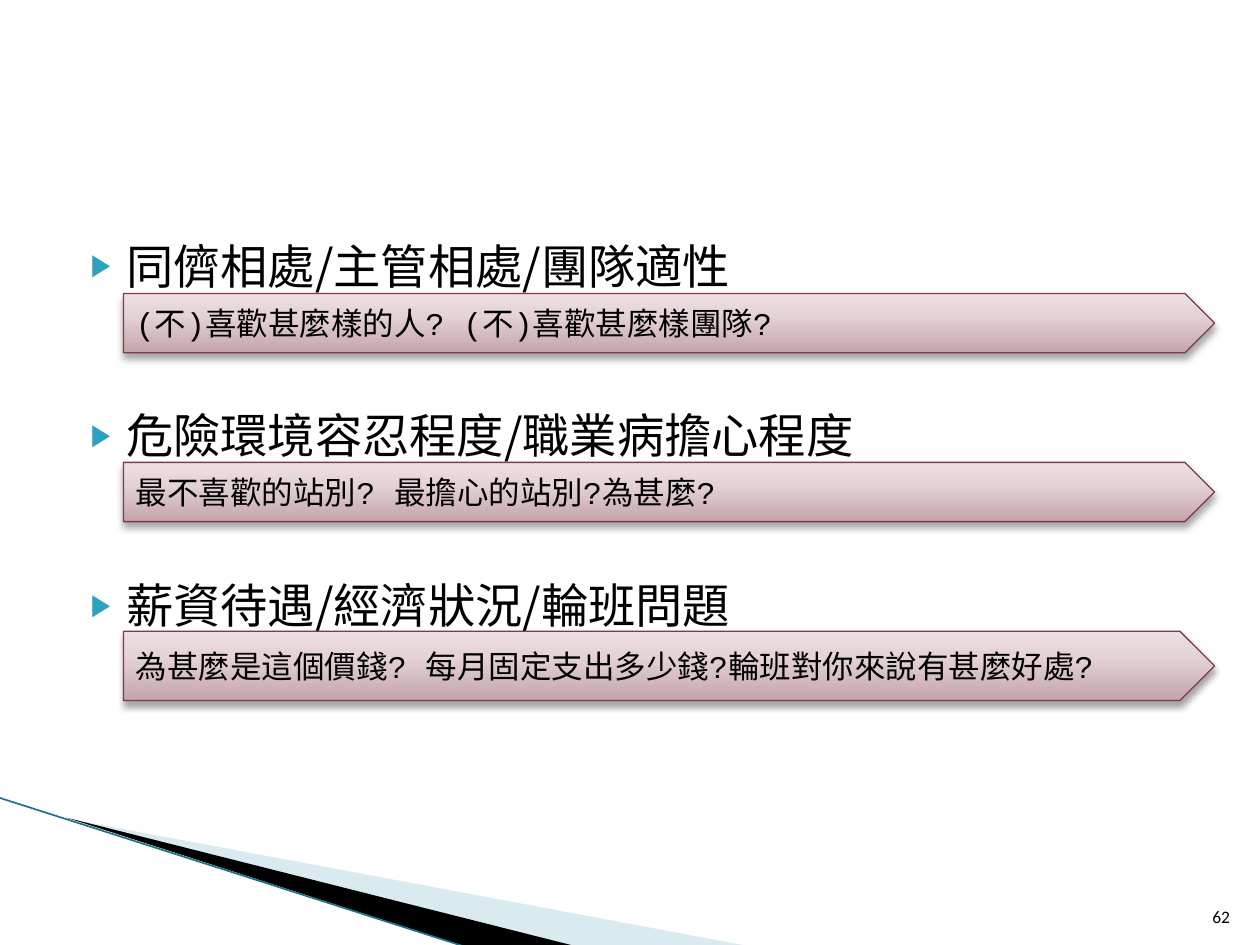
"""Build the interview topics slide with three question bars."""
from pptx import Presentation
from pptx.dml.color import RGBColor
from pptx.enum.shapes import MSO_CONNECTOR, MSO_SHAPE
from pptx.enum.text import MSO_ANCHOR, PP_ALIGN
from pptx.oxml import parse_xml
from pptx.oxml.ns import qn
from pptx.util import Inches, Pt

PLATE = MSO_SHAPE.PENTAGON
STRAIGHT = MSO_CONNECTOR.STRAIGHT
MIDDLE, BOTTOM = MSO_ANCHOR.MIDDLE, MSO_ANCHOR.BOTTOM
LEFT, RIGHT = PP_ALIGN.LEFT, PP_ALIGN.RIGHT
NS = 'xmlns:a="http://schemas.openxmlformats.org/drawingml/2006/main"'
COLORS = {
    "text": "000000", "bullet": "2DA2BF", "pale": "D9EAF1", "black": "000000",
    "edge": "1B7587", "bar_line": "7D3C4A",
    "bar_low": "C4A5A9", "bar_mid": "E5D4D7", "bar_high": "EEE0E2",
}
TOPICS = [
    ("同儕相處/主管相處/團隊適性", "(不)喜歡甚麼樣的人? (不)喜歡甚麼樣團隊?", 0.47),
    ("危險環境容忍程度/職業病擔心程度", "最不喜歡的站別? 最擔心的站別?為甚麼?", 0.47),
    ("薪資待遇/經濟狀況/輪班問題", "為甚麼是這個價錢? 每月固定支出多少錢?輪班對你來說有甚麼好處?", 0.55),
]
WEDGES = [
    ("pale", [(0.55, 6.5), (5.95, 7.51), (4.56, 7.51)]),
    ("black", [(0.53, 6.49), (4.57, 7.51), (3.72, 7.52)]),
]


def rgb(name):
    return RGBColor.from_string(COLORS[name])


def add_text(p, text, font, size):
    r = p.add_run()
    r.text = text
    r.font.name, r.font.size = font, Pt(size)
    r.font.color.rgb = rgb("text")
    return r


prs = Presentation()
prs.slide_width, prs.slide_height = Inches(10), Inches(7.5)
s = prs.slides.add_slide(prs.slide_layouts[1])
title = s.shapes.title.element
title.getparent().remove(title)

for color, points in WEDGES:
    corners = [(Inches(x), Inches(y)) for x, y in points]
    builder = s.shapes.build_freeform(*corners[0])
    builder.add_line_segments(corners[1:], close=True)
    wedge = builder.convert_to_shape()
    wedge.shadow.inherit = False
    wedge.fill.solid()
    wedge.fill.fore_color.rgb = rgb(color)
    wedge.line.fill.background()

edge = s.shapes.add_connector(STRAIGHT, Inches(-0.01), Inches(6.33), Inches(3.71), Inches(7.52))
edge.line.color.rgb = rgb("edge")
edge.line.width = Pt(0.95)
edge.element.spPr.append(parse_xml(f"<a:effectLst {NS}/>"))

body = s.placeholders[1]
body.left, body.top, body.width, body.height = Inches(0.5), Inches(1.62), Inches(9), Inches(4.95)
tf = body.text_frame
for i, (topic, question, height) in enumerate(TOPICS):
    p = tf.paragraphs[0] if i == 0 else tf.add_paragraph()
    p.line_spacing = Pt(47.5)
    p.space_before = Pt(49.5 if i else 0)
    pPr = p._p.get_or_add_pPr()
    pPr.set("marL", str(Inches(0.4)))
    pPr.set("indent", str(Inches(-0.28)))
    for xml in (
        f'<a:buClr {NS}><a:srgbClr val="{COLORS["bullet"]}"/></a:buClr>',
        f'<a:buSzPct {NS} val="65000"/>',
        f'<a:buChar {NS} char="▶"/>',
    ):
        pPr.append(parse_xml(xml))
    r = add_text(p, topic, "Noto Sans CJK SC", 27)
    r._r.get_or_add_rPr().append(parse_xml(f'<a:ea {NS} typeface="Noto Sans CJK SC"/>'))

    bar = s.shapes.add_shape(PLATE, Inches(0.98), Inches(2.33 + 1.34 * i), Inches(8.66), Inches(height))
    bar.line.color.rgb = rgb("bar_line")
    bar.line.width = Pt(0.75)
    spPr = bar.element.spPr
    stops = "".join(
        f'<a:gs pos="{pos * 1000}"><a:srgbClr val="{COLORS[name]}"/></a:gs>'
        for pos, name in ((0, "bar_low"), (65, "bar_mid"), (100, "bar_high"))
    )
    spPr.find(qn("a:prstGeom")).addnext(parse_xml(
        f'<a:gradFill {NS} rotWithShape="1"><a:gsLst>{stops}</a:gsLst>'
        '<a:lin ang="16200000" scaled="0"/></a:gradFill>'))
    spPr.append(parse_xml(
        f'<a:effectLst {NS}><a:outerShdw blurRad="{Pt(4)}" dist="{Pt(3)}" dir="5400000" rotWithShape="0">'
        '<a:srgbClr val="000000"><a:alpha val="35000"/></a:srgbClr></a:outerShdw></a:effectLst>'))
    bar.text_frame.vertical_anchor = MIDDLE
    p = bar.text_frame.paragraphs[0]
    p.alignment = LEFT
    add_text(p, question, "Courier New", 18)

number = s.shapes.add_textbox(Inches(9.46), Inches(7.01), Inches(0.4), Inches(0.4))
tf = number.text_frame
tf.word_wrap = True
tf.vertical_anchor = BOTTOM
p = tf.paragraphs[0]
p.alignment = RIGHT
add_text(p, "62", "Calibri", 10)

prs.save("out.pptx")
